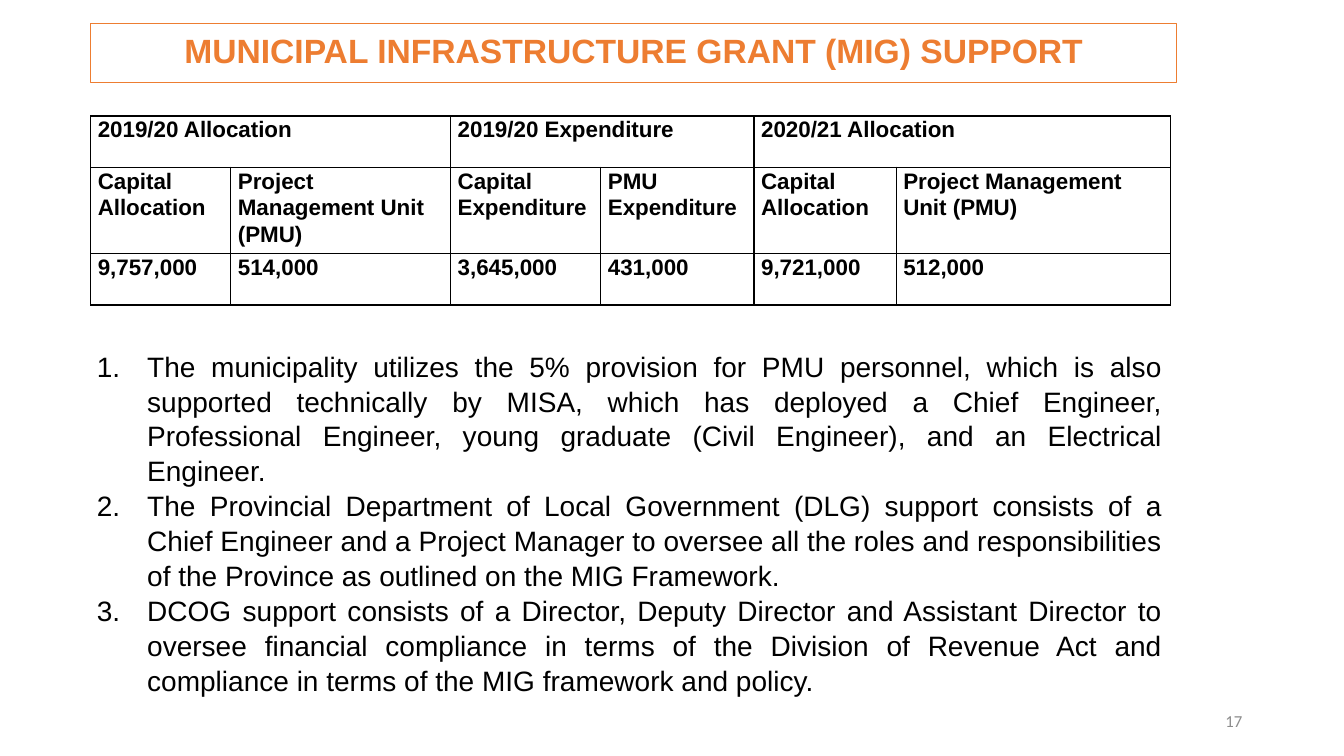
from lxml import etree
from pptx import Presentation
from pptx import util as u
from pptx.dml.color import RGBColor
from pptx.enum import text
from pptx.oxml.ns import qn

W, H = 13.33, 7.5
COLORS = {"accent": "ED7D31", "ink": "000000", "muted": "8C8C8C"}
COLUMNS = [1.39, 2.18, 1.49, 1.52, 1.41, 2.72]
ROWS = [0.51, 0.8, 0.51]
GROUPS = ["2019/20 Allocation", "2019/20 Expenditure", "2020/21 Allocation"]
HEADINGS = ["Capital Allocation", "Project Management Unit (PMU)",
            "Capital Expenditure", "PMU Expenditure",
            "Capital Allocation", "Project Management Unit (PMU)"]
AMOUNTS = ["9,757,000", "514,000", "3,645,000", "431,000", "9,721,000", "512,000"]
POINTS = [
    "The municipality utilizes the 5% provision for PMU personnel, which is also "
    "supported technically by MISA, which has deployed a Chief Engineer, Professional "
    "Engineer, young graduate (Civil Engineer), and an Electrical Engineer.",
    "The Provincial Department of Local Government (DLG) support consists of a Chief "
    "Engineer and a Project Manager to oversee all the roles and responsibilities of "
    "the Province as outlined on the MIG Framework.",
    "DCOG support consists of a Director, Deputy Director and Assistant Director to "
    "oversee financial compliance in terms of the Division of Revenue Act and "
    "compliance in terms of the MIG framework and policy.",
]


def place(sp, box):
    """Move a shape to a box given in inches."""
    sp.left, sp.top, sp.width, sp.height = map(u.Inches, box)


def style(p, size, color, font="Arial", bold=False, align=None, spacing=1.0):
    """Format a paragraph and its runs."""
    p.alignment = align
    p.line_spacing = spacing
    p.space_before = u.Pt(0)
    for r in p.runs:
        r.font.size, r.font.name, r.font.bold = u.Pt(size), font, bold
        r.font.color.rgb = RGBColor.from_string(COLORS[color])


def add_title(s, box):
    """Fill the outlined title placeholder."""
    sp = s.shapes.title
    place(sp, box)
    sp.line.color.rgb = RGBColor.from_string(COLORS["accent"])
    sp.line.width = u.Pt(0.75)
    tf = sp.text_frame
    tf.text = "MUNICIPAL INFRASTRUCTURE GRANT (MIG) SUPPORT"
    tf.auto_size = text.MSO_AUTO_SIZE.NONE
    tf.vertical_anchor = text.MSO_ANCHOR.MIDDLE
    style(tf.paragraphs[0], 24, "accent", bold=True, align=text.PP_ALIGN.CENTER, spacing=0.9)


def add_borders(cell):
    """Draw a thin line on each side of a cell."""
    tc_pr = cell._tc.get_or_add_tcPr()
    for i, side in enumerate(("lnL", "lnR", "lnT", "lnB")):
        ln = etree.Element(qn(f"a:{side}"), w=str(u.Pt(1)))
        fill = etree.SubElement(ln, qn("a:solidFill"))
        etree.SubElement(fill, qn("a:srgbClr"), val=COLORS["ink"])
        tc_pr.insert(i, ln)


def add_grant_table(s, box):
    """Add the table of allocations and expenditure."""
    frame = s.shapes.add_table(len(ROWS), len(COLUMNS), *map(u.Inches, box))
    table = frame.table
    table.first_row = table.horz_banding = False
    for column, width in zip(table.columns, COLUMNS):
        column.width = u.Inches(width)
    for row, height in zip(table.rows, ROWS):
        row.height = u.Inches(height)
    for i, group in enumerate(GROUPS):
        table.cell(0, 2 * i).merge(table.cell(0, 2 * i + 1))
        table.cell(0, 2 * i).text = group
    for i, values in enumerate((HEADINGS, AMOUNTS), 1):
        for j, value in enumerate(values):
            table.cell(i, j).text = value
    for cell in table.iter_cells():
        cell.fill.background()
        cell.margin_left = cell.margin_right = u.Inches(0.07)
        cell.margin_top = cell.margin_bottom = 0
        add_borders(cell)
        style(cell.text_frame.paragraphs[0], 16, "ink", bold=True, spacing=1.07)


def add_points(s, box):
    """Fill the body placeholder with a numbered list."""
    sp = s.placeholders[1]
    place(sp, box)
    tf = sp.text_frame
    tf.text = "\n".join(POINTS)
    tf.auto_size = text.MSO_AUTO_SIZE.NONE
    for p in tf.paragraphs:
        style(p, 20, "ink", align=text.PP_ALIGN.JUSTIFY, spacing=1.04)
        p_pr = p._p.get_or_add_pPr()
        p_pr.set("marL", str(u.Inches(0.5)))
        p_pr.set("indent", str(u.Inches(-0.5)))
        etree.SubElement(p_pr, qn("a:buFont"), typeface="+mj-lt")
        etree.SubElement(p_pr, qn("a:buAutoNum"), type="arabicPeriod")


def add_page_number(s, box):
    """Add the page number at the lower right."""
    tf = s.shapes.add_textbox(*map(u.Inches, box)).text_frame
    tf.word_wrap = True
    tf.vertical_anchor = text.MSO_ANCHOR.MIDDLE
    tf.text = "17"
    style(tf.paragraphs[0], 12, "muted", font="Calibri", align=text.PP_ALIGN.RIGHT)


def main():
    """Build and save the slide."""
    prs = Presentation()
    prs.slide_width, prs.slide_height = u.Inches(W), u.Inches(H)
    s = prs.slides.add_slide(prs.slide_layouts[1])
    add_title(s, (0.9, 0.23, 10.77, 0.59))
    add_page_number(s, (9.42, 6.95, 3, 0.4))
    add_grant_table(s, (0.9, 1.15, sum(COLUMNS), sum(ROWS)))
    add_points(s, (0.86, 3.4, 10.77, 4.07))
    prs.save("out.pptx")


if __name__ == "__main__":
    main()
